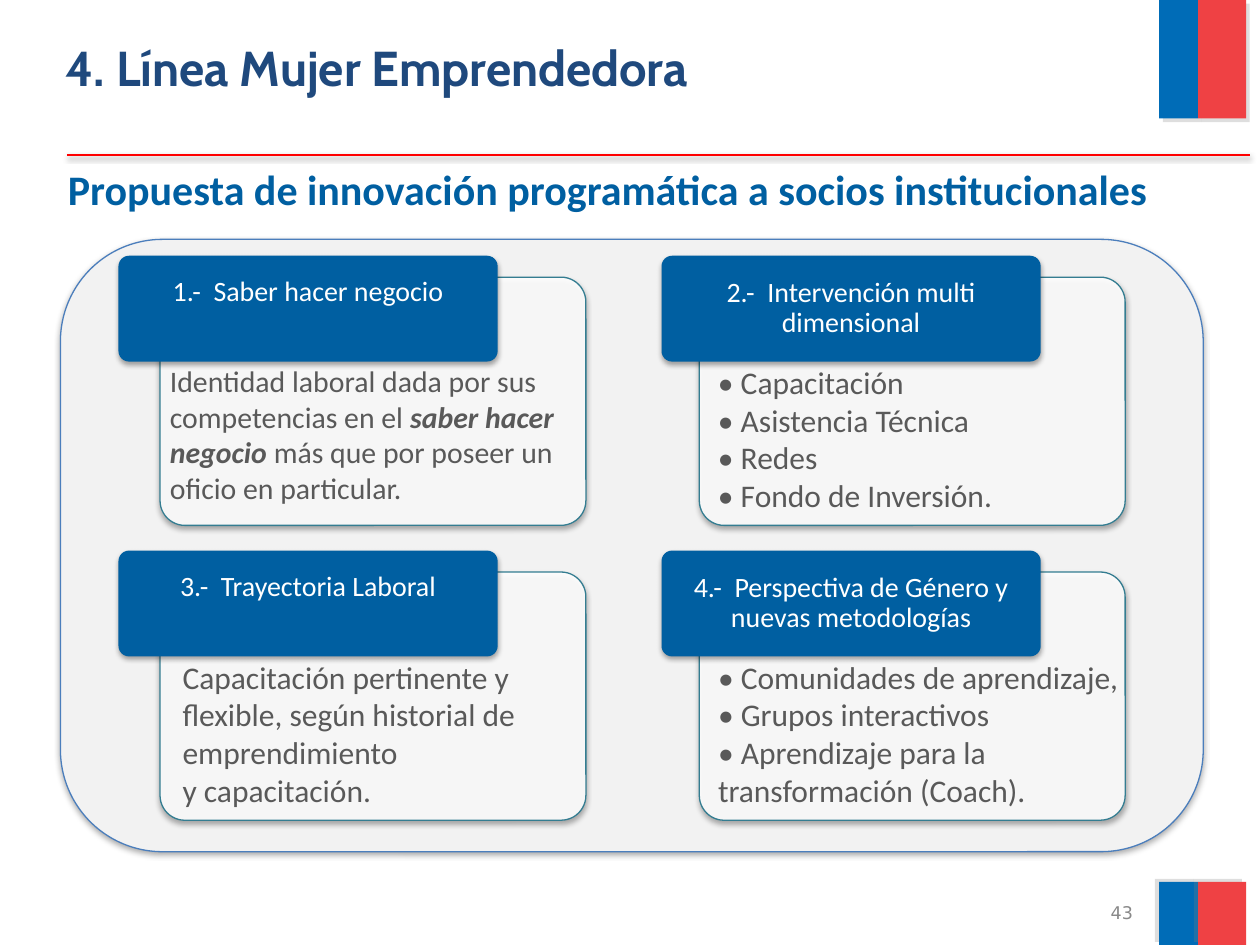
from lxml import etree
from pptx import Presentation
from pptx import util as u
from pptx.dml.color import RGBColor
from pptx.enum import shapes, text
from pptx.oxml.ns import qn

HUES = {
    "blue": "006CB7", "red": "EF4144", "rule": "FF0000", "panel": "F2F2F2",
    "edge": "4B7EBC", "teal": "347D91", "tab": "005FA1", "white": "FFFFFF",
    "body": "595959", "title": "1F497D", "page": "898989",
    "gray": "808080", "black": "000000",
}
SOFT = ("black", 35, 3.1, 1.8, 90)
FONT = {"name": "Calibri", "size": u.Pt(18), "bold": False, "italic": False}
LEFT, MID, RIGHT = text.PP_ALIGN.LEFT, text.PP_ALIGN.CENTER, text.PP_ALIGN.RIGHT
RECT, ROUND = shapes.MSO_SHAPE.RECTANGLE, shapes.MSO_SHAPE.ROUNDED_RECTANGLE
CARDS = [
    ("1.-  Saber hacer negocio", 0, 0, (1.25, 2.83, 3.4, 1.24), 17,
     [["Identidad laboral dada por sus competencias en el ",
       ("saber hacer negocio ", {"bold": True, "italic": True}),
       "más que por poseer un oficio en particular."]]),
    ("2.-  Intervención multi dimensional", 1, 0, (5.6, 2.83, 3.33, 1.31), 18,
     [["• Capacitación"], ["• Asistencia Técnica"], ["• Redes"],
      ["• Fondo de Inversión."]]),
    ("3.-  Trayectoria Laboral", 0, 1, (1.35, 5.17, 3.31, 1.31), 18,
     [["Capacitación pertinente y flexible, según historial de emprendimiento"],
      ["y capacitación."]]),
    ("4.-  Perspectiva de Género y nuevas metodologías", 1, 1,
     (5.6, 5.17, 3.49, 1.31), 18,
     [["• Comunidades de aprendizaje,"], ["• Grupos interactivos"],
      ["• Aprendizaje para la transformación (Coach)."]]),
]


def hue(name):
    """Return the named colour."""
    return RGBColor.from_string(HUES[name])


def apply(item, vals):
    """Set attributes from a dict."""
    for key, val in vals.items():
        setattr(item, key, val)


def shade(shape, tone, alpha, blur, dist, angle):
    """Add an outer shadow to a shape or connector."""
    root = etree.SubElement(shape._element.spPr, qn("a:effectLst"))
    cast = etree.SubElement(
        root, qn("a:outerShdw"), blurRad=str(u.Pt(blur)), dist=str(u.Pt(dist)),
        dir=str(angle * 60000), algn="ctr", rotWithShape="0")
    clr = etree.SubElement(cast, qn("a:srgbClr"), val=HUES[tone])
    etree.SubElement(clr, qn("a:alpha"), val=str(alpha * 1000))


def box(slide, kind, at, fill, line=None, cast=SOFT, adj=None, alpha=None):
    """Draw a filled shape with a shadow."""
    shape = slide.shapes.add_shape(kind, *map(u.Inches, at))
    shape.fill.solid()
    shape.fill.fore_color.rgb = hue(fill)
    if alpha:
        clr = shape._element.spPr.find(".//" + qn("a:srgbClr"))
        etree.SubElement(clr, qn("a:alpha"), val=str(alpha * 1000))
    if line:
        shape.line.color.rgb = hue(line)
        shape.line.width = u.Pt(0.75)
    else:
        shape.line.fill.background()
    if adj:
        shape.adjustments[0] = adj
    shade(shape, *cast)
    return shape


def write(frame, paras, tone, font, para=None, form=None):
    """Fill a text frame with paragraphs of plain or styled runs."""
    apply(frame, {"word_wrap": True, "vertical_anchor": text.MSO_ANCHOR.TOP,
                  **(form or {})})
    for i, runs in enumerate(paras):
        line = frame.paragraphs[0] if i == 0 else frame.add_paragraph()
        apply(line, {"alignment": LEFT, **(para or {})})
        for part in runs:
            words, style = (part, {}) if isinstance(part, str) else part
            run = line.add_run()
            run.text = words
            apply(run.font, {**FONT, **font, **style})
            run.font.color.rgb = hue(tone)


def label(slide, at, *args):
    """Place a text box."""
    area = slide.shapes.add_textbox(*map(u.Inches, at))
    write(area.text_frame, *args)


def card(slide, head, col, row, at, size, paras):
    """Draw a card with its tab and body text."""
    down = 2.34 * row
    box(slide, ROUND, ((1.27, 5.55)[col], 2.2 + down, 3.38, 1.97),
        "white", "teal", adj=0.1, alpha=90)
    tab = box(slide, ROUND, ((0.94, 5.25)[col], 2.03 + down, 3.01, 0.84),
              "tab", adj=0.1)
    side = u.Inches(0.06)
    form = {"margin_left": side, "margin_right": side,
            "margin_top": u.Inches(0.15 if col == 0 else 0.04),
            "margin_bottom": u.Inches(0.04)}
    if col:
        form["vertical_anchor"] = text.MSO_ANCHOR.MIDDLE
    write(tab.text_frame, [[head]], "white", {"size": u.Pt(16)},
          {"alignment": MID, "line_spacing": 0.9, "space_after": u.Pt(5.6)}, form)
    label(slide, at, paras, "body", {"size": u.Pt(size)})


def band(slide, top, high, angle):
    """Draw a blue and red band at the right edge."""
    for left, wide, fill in ((9.2, 0.31, "blue"), (9.51, 0.38, "red")):
        box(slide, RECT, (left, top, wide, high), fill,
            cast=("gray", 25, 0, 3, angle))


def rule(slide):
    """Draw the red line below the title."""
    ends = map(u.Inches, (0.53, 1.23, 9.92, 1.23))
    line = slide.shapes.add_connector(shapes.MSO_CONNECTOR.STRAIGHT, *ends)
    line.line.color.rgb = hue("rule")
    line.line.width = u.Pt(1)
    shade(line, "black", 38, 3.1, 1.6, 90)


def main():
    """Build and save the slide."""
    deck = Presentation()
    apply(deck, {"slide_width": u.Inches(10), "slide_height": u.Inches(7.5)})
    slide = deck.slides.add_slide(deck.slide_layouts[6])
    band(slide, 0, 0.94, 45)
    band(slide, 7, 0.5, 215)
    label(slide, (6.76, 7.14, 2.33, 0.21), [["43"]], "page",
          {"name": "DejaVu Sans", "size": u.Pt(10)}, {"alignment": RIGHT},
          {"vertical_anchor": text.MSO_ANCHOR.MIDDLE})
    box(slide, ROUND, (0.48, 1.9, 9.07, 4.86), "panel", "edge")
    label(slide, (0.44, 1.25, 9.11, 0.56),
          [["Propuesta de innovación programática a socios institucionales"]],
          "tab", {"size": u.Pt(24), "bold": True})
    rule(slide)
    for item in CARDS:
        card(slide, *item)
    label(slide, (0.42, 0.25, 9.11, 0.82), [["4. Línea Mujer Emprendedora"]],
          "title", {"name": "Cabin", "size": u.Pt(28), "bold": True})
    deck.save("out.pptx")


if __name__ == "__main__":
    main()
